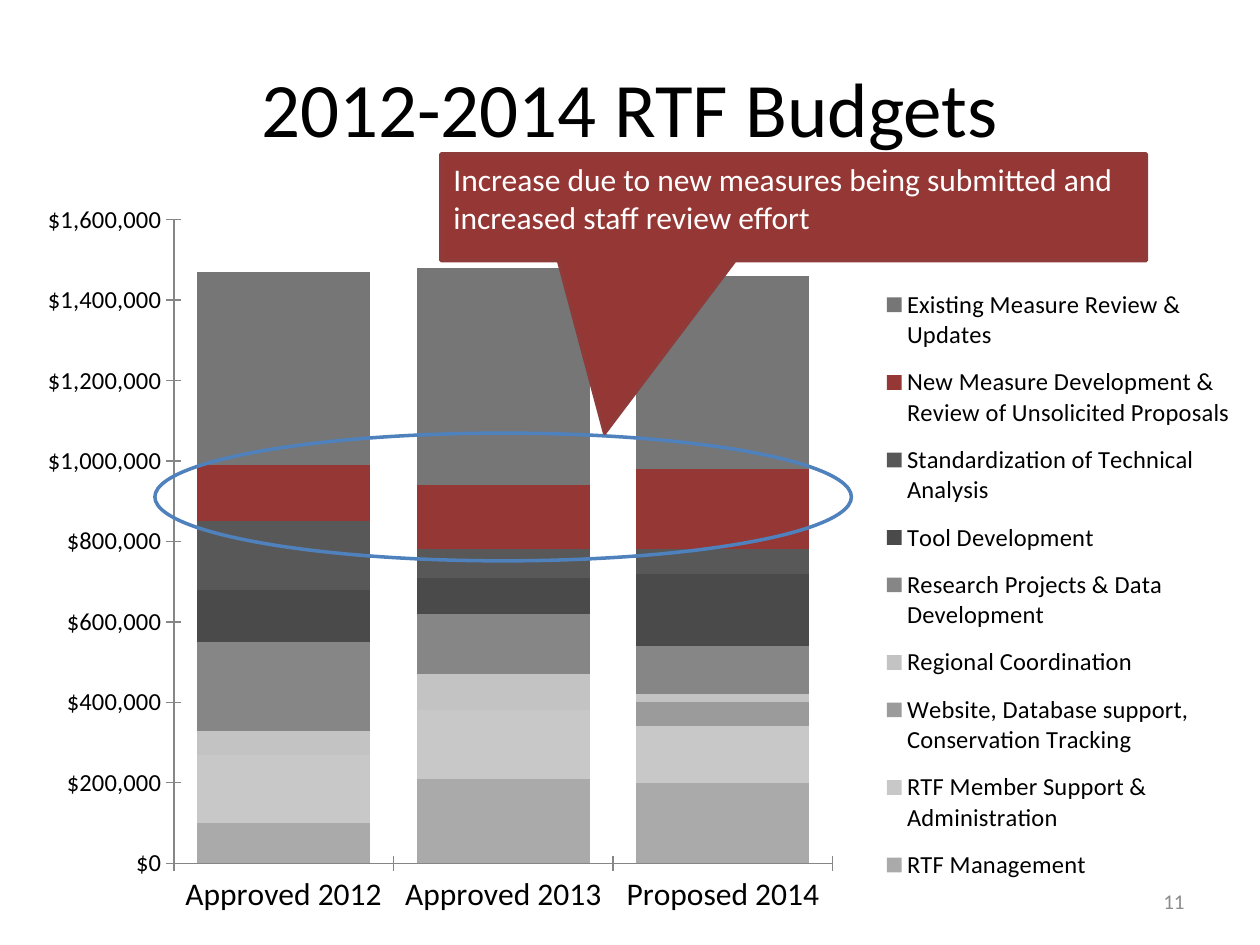
"""Build the 2012-2014 RTF budgets slide with its stacked column chart."""
from dataclasses import dataclass

import lxml.etree
import pptx
import pptx.chart.data
import pptx.dml.color
import pptx.enum.chart
import pptx.enum.shapes
import pptx.enum.text
import pptx.oxml.ns
import pptx.util

FONT = "Calibri"
COLORS = {
    "black": "000000", "white": "FFFFFF", "number": "8C8C8C", "axis": "868686",
    "ring": "4F81BD", "accent": "953735", "accent_line": "8E3B39",
    "management": "AAAAAA", "support": "C8C8C8", "website": "9B9B9B",
    "coordination": "C3C3C3", "research": "868686", "tools": "4A4A4A",
    "standards": "585858", "existing": "767676",
}
CATEGORIES = ["Approved 2012", "Approved 2013", "Proposed 2014"]


@dataclass
class Budget:
    """One budget line with a value per year."""
    name: str
    values: tuple[int, int, int]
    color: str


@dataclass
class Box:
    """A position and size in points."""
    left: float
    top: float
    width: float
    height: float

    def lengths(self) -> list[pptx.util.Pt]:
        """Return the four lengths in the order that shapes take them."""
        return [pptx.util.Pt(v) for v in (self.left, self.top, self.width, self.height)]


BUDGETS = [
    Budget("RTF Management", (100000, 210000, 200000), "management"),
    Budget("RTF Member Support & Administration", (170000, 170000, 140000), "support"),
    Budget("Website, Database support, Conservation Tracking", (0, 0, 60000), "website"),
    Budget("Regional Coordination", (60000, 90000, 20000), "coordination"),
    Budget("Research Projects & Data Development", (220000, 150000, 120000), "research"),
    Budget("Tool Development", (130000, 90000, 180000), "tools"),
    Budget("Standardization of Technical Analysis", (170000, 70000, 60000), "standards"),
    Budget("New Measure Development & Review of Unsolicited Proposals",
           (140000, 160000, 200000), "accent"),
    Budget("Existing Measure Review & Updates", (480000, 540000, 480000), "existing"),
]


def rgb(name: str) -> pptx.dml.color.RGBColor:
    """Return the named colour."""
    return pptx.dml.color.RGBColor.from_string(COLORS[name])


def set_font(font, size: float, color: str) -> None:
    """Give a font its face, size and colour."""
    font.name = FONT
    font.size = pptx.util.Pt(size)
    font.color.rgb = rgb(color)


def set_text(shape, text: str, size: float, color: str, align: str, anchor: str) -> None:
    """Write one formatted paragraph into a shape."""
    frame = shape.text_frame
    frame.text = text
    frame.word_wrap = True
    frame.vertical_anchor = pptx.enum.text.MSO_ANCHOR[anchor]
    para = frame.paragraphs[0]
    para.alignment = pptx.enum.text.PP_ALIGN[align]
    set_font(para.runs[0].font, size, color)


def make_layout(x: float, y: float, w: float, h: float, inner: bool = False):
    """Return a manual chart layout given as fractions of the chart."""
    qn = pptx.oxml.ns.qn
    layout = lxml.etree.Element(qn("c:layout"))
    manual = lxml.etree.SubElement(layout, qn("c:manualLayout"))
    settings = {"layoutTarget": "inner"} if inner else {}
    settings |= {"xMode": "edge", "yMode": "edge", "x": x, "y": y, "w": w, "h": h}
    for tag, value in settings.items():
        lxml.etree.SubElement(manual, qn(f"c:{tag}")).set("val", str(value))
    return layout


def remove_layout(parent) -> None:
    """Drop the automatic layout of a chart part."""
    for layout in parent.findall(pptx.oxml.ns.qn("c:layout")):
        parent.remove(layout)


def add_budget_chart(slide, box: Box):
    """Add the stacked column chart and return its frame."""
    data = pptx.chart.data.CategoryChartData(number_format='"$"#,##0')
    data.categories = CATEGORIES
    for budget in BUDGETS:
        data.add_series(budget.name, budget.values)
    kind = pptx.enum.chart.XL_CHART_TYPE.COLUMN_STACKED
    frame = slide.shapes.add_chart(kind, *box.lengths(), data)
    chart = frame.chart
    chart.has_title = False
    set_font(chart.font, 18, "black")

    plot = chart.plots[0]
    plot.gap_width = 27
    plot.overlap = 100
    plot.vary_by_categories = False
    for series, budget in zip(plot.series, BUDGETS):
        series.format.fill.solid()
        series.format.fill.fore_color.rgb = rgb(budget.color)

    for axis, size in ((chart.category_axis, 18), (chart.value_axis, 14)):
        axis.has_major_gridlines = False
        axis.major_tick_mark = pptx.enum.chart.XL_TICK_MARK.CROSS
        axis.format.line.color.rgb = rgb("axis")
        axis.format.line.width = pptx.util.Pt(0.75)
        set_font(axis.tick_labels.font, size, "black")
    value_axis = chart.value_axis
    value_axis.minimum_scale = 0
    value_axis.maximum_scale = 1600000
    value_axis.major_unit = 200000
    value_axis.tick_labels.number_format = '"$"#,##0'
    value_axis.tick_labels.number_format_is_linked = False

    chart.has_legend = True
    legend = chart.legend
    legend.position = pptx.enum.chart.XL_LEGEND_POSITION.RIGHT
    legend.include_in_layout = False
    set_font(legend.font, 14, "black")

    qn = pptx.oxml.ns.qn
    plot_area = chart.element.find(f".//{qn('c:plotArea')}")
    remove_layout(plot_area)
    plot_area.insert(0, make_layout(0.138, 0.083, 0.523, 0.814, inner=True))
    legend_element = chart.element.find(f".//{qn('c:legend')}")
    remove_layout(legend_element)
    legend_position = legend_element.find(qn("c:legendPos"))
    legend_position.addnext(make_layout(0.69, 0.15, 0.3, 0.79))
    return frame


def add_outlined(slide, kind: str, box: Box, line: str):
    """Add a preset shape with a two-point outline and no shadow."""
    preset = pptx.enum.shapes.MSO_SHAPE[kind]
    shape = slide.shapes.add_shape(preset, *box.lengths())
    shape.shadow.inherit = False
    shape.line.color.rgb = rgb(line)
    shape.line.width = pptx.util.Pt(2)
    return shape


def main() -> None:
    """Build and save the deck."""
    deck = pptx.Presentation()
    deck.slide_width, deck.slide_height = pptx.util.Pt(720), pptx.util.Pt(540)
    page = deck.slides.add_slide(deck.slide_layouts[5])

    title = page.shapes.title
    title.left, title.top, title.width, title.height = Box(36, 16, 648, 90).lengths()
    set_text(title, "2012-2014 RTF Budgets", 44, "black", "CENTER", "MIDDLE")
    chart_frame = add_budget_chart(page, Box(0, 88, 720, 452))
    title.element.addprevious(chart_frame.element)

    ring = add_outlined(page, "OVAL", Box(88.5, 247.5, 398, 73), "ring")
    ring.fill.background()

    callout = add_outlined(page, "RECTANGULAR_CALLOUT", Box(252, 88, 403, 61), "accent_line")
    callout.adjustments[0], callout.adjustments[1] = -0.268, 2.116
    callout.fill.solid()
    callout.fill.fore_color.rgb = rgb("accent")
    set_text(callout, "Increase due to new measures being submitted and increased "
             "staff review effort", 18, "white", "LEFT", "TOP")

    page_number = page.shapes.add_textbox(*Box(516, 500.5, 168, 29).lengths())
    set_text(page_number, "11", 12, "number", "RIGHT", "MIDDLE")
    deck.save("out.pptx")


if __name__ == "__main__":
    main()
